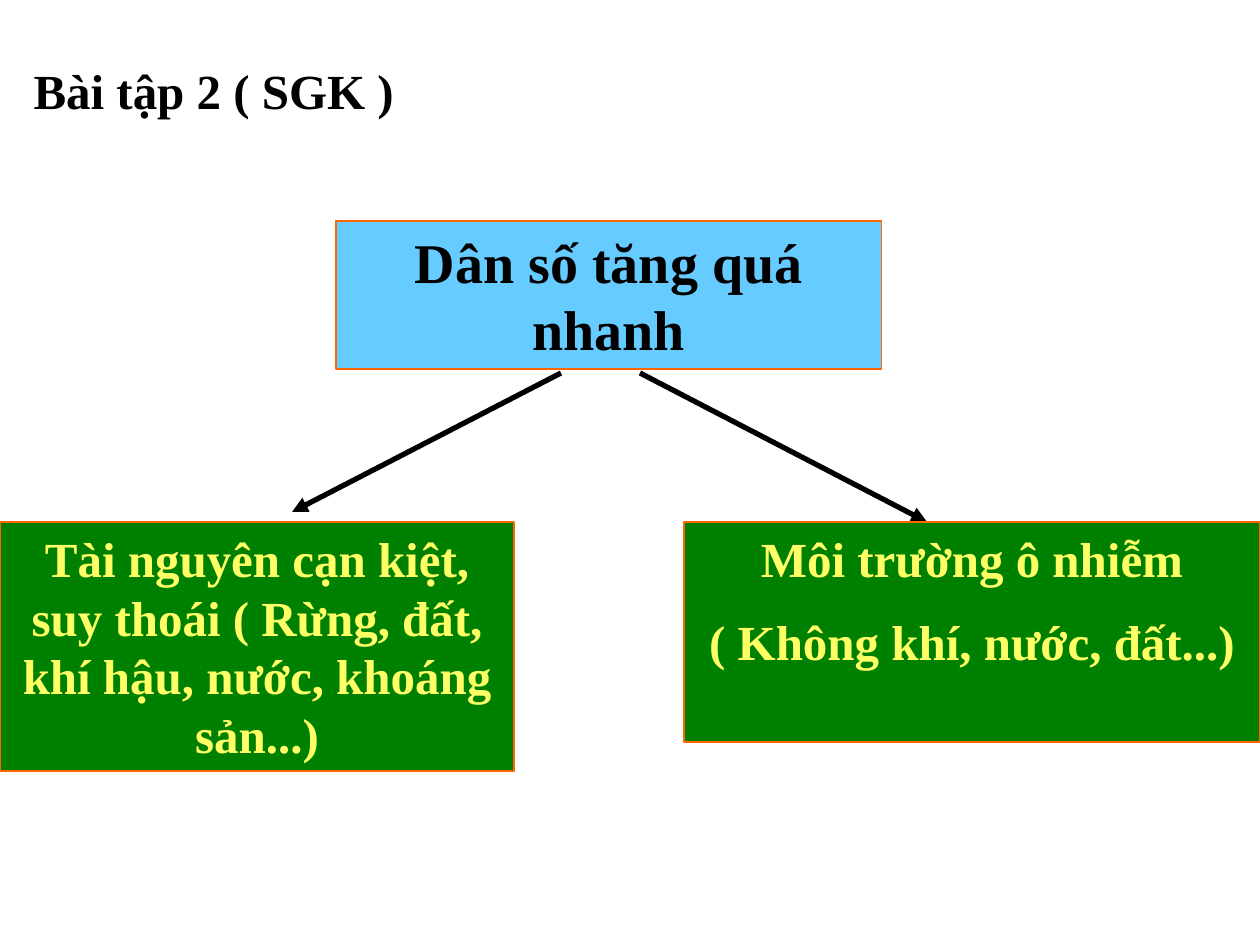
from dataclasses import dataclass

from lxml.etree import SubElement
from pptx import Presentation
from pptx.dml.color import RGBColor
from pptx.enum.shapes import MSO_CONNECTOR, MSO_SHAPE
from pptx.enum.text import MSO_ANCHOR, MSO_AUTO_SIZE, PP_ALIGN
from pptx.oxml.ns import qn
from pptx.util import Inches, Pt

PX = Inches(1) // 126


@dataclass(frozen=True)
class Theme:
    font: str = "Times New Roman"
    text_size: int = 28
    cause_size: int = 32
    black: RGBColor = RGBColor(0, 0, 0)
    cause_fill: RGBColor = RGBColor(0x66, 0xCC, 0xFF)
    effect_fill: RGBColor = RGBColor(0, 0x80, 0)
    effect_text: RGBColor = RGBColor(0xFF, 0xFF, 0x66)
    border: RGBColor = RGBColor(0xFF, 0x66, 0)
    border_width: float = 0.75
    arrow_width: int = 3


THEME = Theme()


def write_text(shape, lines, size, color, alignment):
    """Fill a shape from its top, with half a line between paragraphs."""
    text_frame = shape.text_frame
    text_frame.text = "\n".join(lines)
    text_frame.word_wrap = True
    text_frame.auto_size = MSO_AUTO_SIZE.NONE
    text_frame.vertical_anchor = MSO_ANCHOR.TOP
    for index, paragraph in enumerate(text_frame.paragraphs):
        paragraph.alignment = alignment
        paragraph.space_before = Pt(size / 2 if index else 0)
        for run in paragraph.runs:
            run.font.name = THEME.font
            run.font.size = Pt(size)
            run.font.bold = True
            run.font.color.rgb = color


def place_title(slide, box, text):
    title = slide.shapes.title
    title.left, title.top, title.width, title.height = (n * PX for n in box)
    write_text(title, [text], THEME.text_size, THEME.black, PP_ALIGN.LEFT)


def add_box(slide, box, lines, fill, size, color):
    shape = slide.shapes.add_shape(MSO_SHAPE.RECTANGLE, *(n * PX for n in box))
    shape.shadow.inherit = False
    shape.fill.solid()
    shape.fill.fore_color.rgb = fill
    shape.line.color.rgb = THEME.border
    shape.line.width = Pt(THEME.border_width)
    write_text(shape, lines, size, color, PP_ALIGN.CENTER)


def add_arrow(slide, start, end):
    arrow = slide.shapes.add_connector(
        MSO_CONNECTOR.STRAIGHT, *(n * PX for n in start + end))
    arrow.line.color.rgb = THEME.black
    arrow.line.width = Pt(THEME.arrow_width)
    SubElement(arrow.line._get_or_add_ln(), qn("a:tailEnd"), type="triangle")
    SubElement(arrow._element.spPr, qn("a:effectLst"))


def add_cause_diagram(slide, box):
    """Draw one cause at the top with arrows to its two effects below."""
    left, top, width, _ = box
    effects_top = top + 301
    right_width = 576
    add_arrow(slide, (left + 561, top + 152), (left + 292, top + 291))
    add_arrow(slide, (left + 640, top + 152), (left + 927, effects_top))
    add_box(slide, (left + 336, top, 546, 148), ["Dân số tăng quá nhanh"],
            THEME.cause_fill, THEME.cause_size, THEME.black)
    effects = [
        ((left, effects_top, 514, 249),
         ["Tài nguyên cạn kiệt, suy thoái ( Rừng, đất, khí hậu, nước, "
          "khoáng sản...)"]),
        ((left + width - right_width, effects_top, right_width, 220),
         ["Môi trường ô nhiễm", "( Không khí, nước, đất...)"]),
    ]
    for effect_box, lines in effects:
        add_box(slide, effect_box, lines, THEME.effect_fill,
                THEME.text_size, THEME.effect_text)


def main():
    presentation = Presentation()
    presentation.slide_width = 1260 * PX
    presentation.slide_height = 945 * PX
    slide = presentation.slides.add_slide(presentation.slide_layouts[5])
    place_title(slide, (21, 54, 451, 72), "Bài tập 2 ( SGK )")
    add_cause_diagram(slide, (0, 221, 1260, 550))
    presentation.save("out.pptx")


if __name__ == "__main__":
    main()
